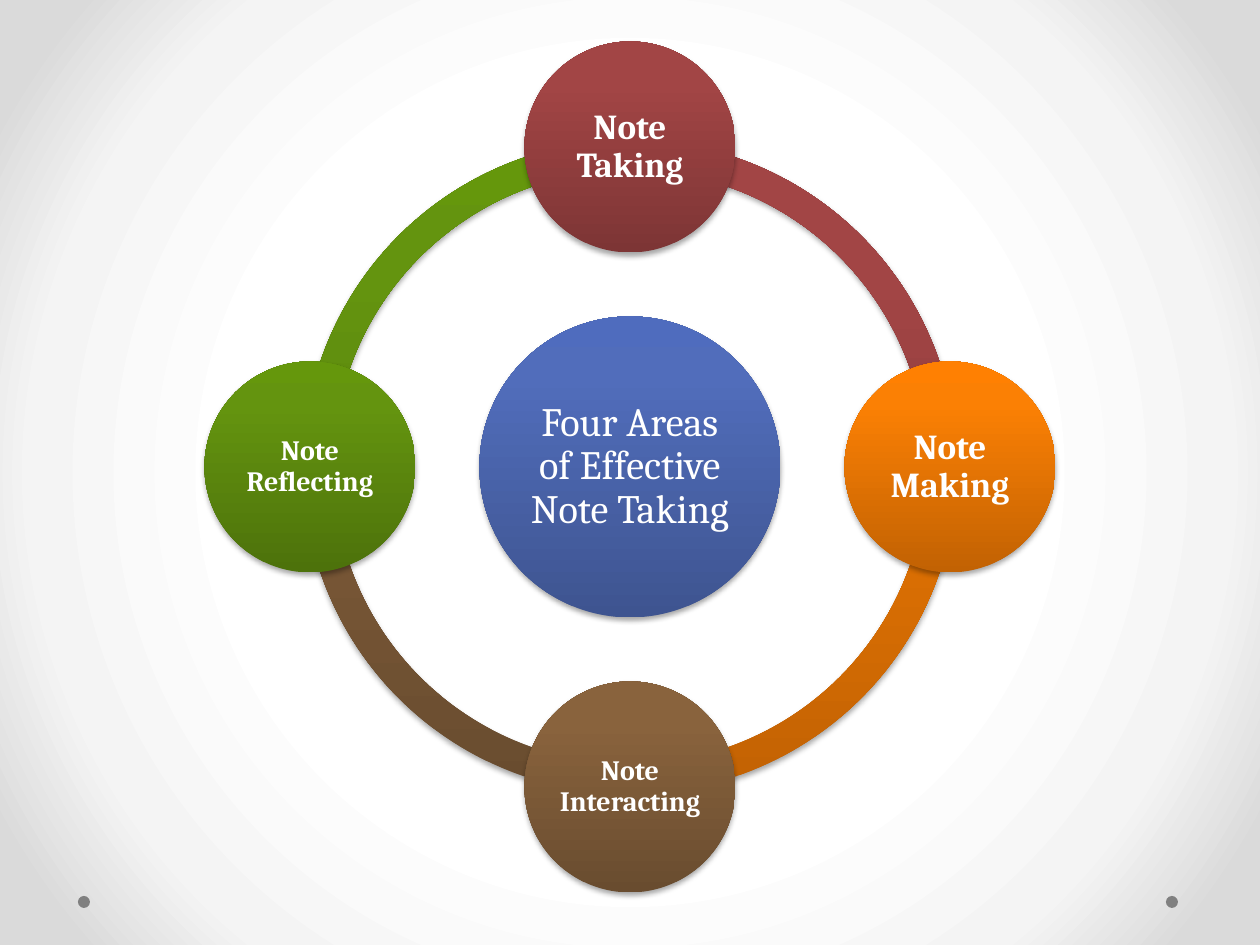
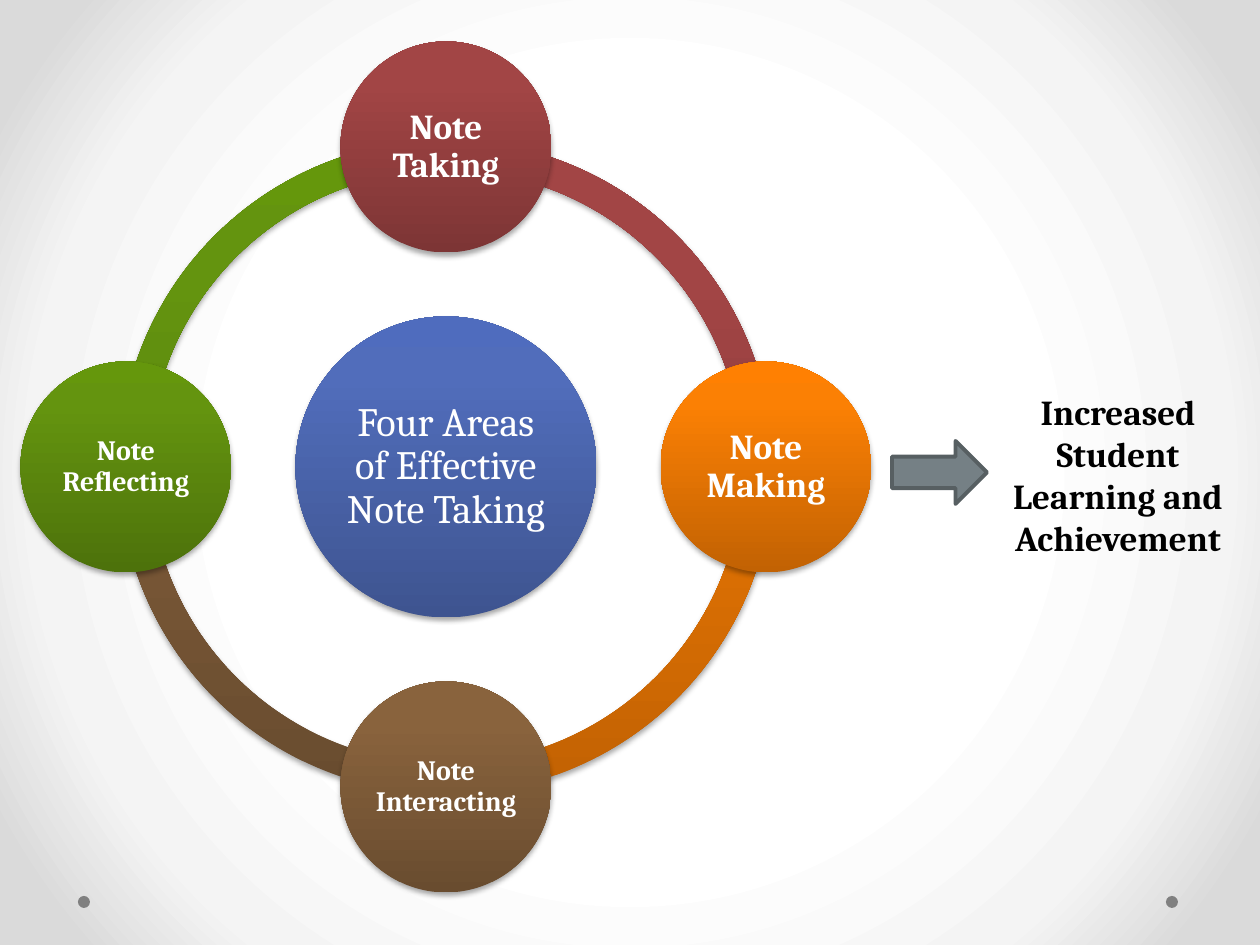
from math import cos, radians, sin

from lxml.etree import SubElement
from pptx import Presentation
from pptx.dml.color import RGBColor
from pptx.enum.shapes import MSO_SHAPE
from pptx.enum.text import MSO_ANCHOR, PP_ALIGN
from pptx.oxml.ns import qn
from pptx.util import Pt

PX = 914400 / 126
FONT = "Cambria"
WHITE, BLACK, DOT = "FFFFFF", "000000", "808080"
ARROW, ARROW_LINE = "758085", "575F62"
BACKDROP = [(50, "FFFFFF"), (76, "F4F4F4"), (92, "DADADA")]
BLUE = [(0, "3E5490"), (80, "516DBB"), (100, "4F6CBE")]
RED = [(0, "7D3535"), (80, "A24545"), (100, "A44343")]
ORANGE = [(0, "C26203"), (80, "FB8004"), (100, "FF8002")]
BROWN = [(0, "694C2F"), (80, "89633D"), (100, "8B633C")]
GREEN = [(0, "4D720B"), (80, "64940F"), (100, "65970C")]

AREAS = [
    ("Note Taking", RED, 20),
    ("Note Making", ORANGE, 20),
    ("Note Interacting", BROWN, 16),
    ("Note Reflecting", GREEN, 16),
]
HUB_TEXT = "Four Areas of Effective Note Taking"
OUTCOME = "Increased Student Learning and Achievement"
CENTER_Y, ORBIT, NODE, HUB, RING = 467, 320, 211, 301, 654


def emu(px):
    return round(px * PX)


def rgb(value):
    return RGBColor.from_string(value)


def apply(target, values):
    for name, value in values.items():
        setattr(target, name, value)


def child(parent, tag, **attrs):
    return SubElement(parent, qn(tag), {k: str(v) for k, v in attrs.items()})


def paint_gradient(fill, holder, stops, radial=False):
    fill.solid()
    solid = holder.find(qn("a:solidFill"))
    grad = child(holder, "a:gradFill", rotWithShape=1)
    holder.replace(solid, grad)
    stop_list = child(grad, "a:gsLst")
    for position, value in stops:
        stop = child(stop_list, "a:gs", pos=position * 1000)
        child(stop, "a:srgbClr", val=value)
    if radial:
        circle = child(grad, "a:path", path="circle")
        child(circle, "a:fillToRect", **dict.fromkeys("ltrb", 50000))
    else:
        child(grad, "a:lin", ang=16200000, scaled=0)


class Deck:
    def __init__(self):
        self.prs = Presentation()
        apply(self.prs, {"slide_width": emu(1260), "slide_height": emu(945)})
        master = self.prs.slide_master
        fill = master.background.fill
        fill.solid()
        holder = master.element.find(".//" + qn("p:bgPr"))
        paint_gradient(fill, holder, BACKDROP, radial=True)

    def slide(self):
        self.s = self.prs.slides.add_slide(self.prs.slide_layouts[6])
        self.shapes = self.s.shapes
        for x in (1166, 78):
            self.shape(MSO_SHAPE.OVAL, x, 896, 12, 12, DOT)

    def shape(self, kind, x, y, w, h, color, line=None):
        sp = self.shapes.add_shape(kind, emu(x), emu(y), emu(w), emu(h))
        sp.shadow.inherit = False
        if isinstance(color, str):
            sp.fill.solid()
            sp.fill.fore_color.rgb = rgb(color)
        else:
            paint_gradient(sp.fill, sp.element.spPr, color)
            self.soft_shadow(sp)
        if line:
            sp.line.color.rgb = rgb(line)
            sp.line.width = Pt(2.25)
        else:
            sp.line.fill.background()
        return sp

    def soft_shadow(self, sp):
        effects = sp.element.spPr.find(qn("a:effectLst"))
        shadow = child(effects, "a:outerShdw", blurRad=Pt(3.1), dist=Pt(1.8),
                       dir=5400000, rotWithShape=0)
        child(child(shadow, "a:srgbClr", val=BLACK), "a:alpha", val=35000)

    def label(self, sp, text, size, color, bold=True, spacing=None, **frame):
        tf = sp.text_frame
        apply(tf, {"word_wrap": True, **frame})
        p = tf.paragraphs[0]
        apply(p, {"alignment": PP_ALIGN.CENTER, "line_spacing": spacing})
        r = p.add_run()
        r.text = text
        apply(r.font, {"name": FONT, "size": Pt(size), "bold": bold})
        r.font.color.rgb = rgb(color)

    def text(self, x, y, w, h, text, size, color):
        sp = self.shapes.add_textbox(emu(x), emu(y), emu(w), emu(h))
        self.label(sp, text, size, color)

    def circle(self, cx, cy, diameter, stops, text, size, bold=True):
        sp = self.shape(MSO_SHAPE.OVAL, cx - diameter / 2, cy - diameter / 2,
                        diameter, diameter, stops)
        sides = ("left", "right", "top", "bottom")
        insets = {f"margin_{side}": emu(3) for side in sides}
        self.label(sp, text, size, WHITE, bold, 0.9,
                   vertical_anchor=MSO_ANCHOR.MIDDLE, **insets)

    def arc(self, cx, cy, start, stops):
        sp = self.shape(MSO_SHAPE.BLOCK_ARC, cx - RING / 2, cy - RING / 2,
                        RING, RING, stops)
        ends = (start % 360 * 0.6, (start + 90) % 360 * 0.6, 0.046)
        for i, value in enumerate(ends):
            sp.adjustments[i] = value

    def cycle(self, cx):
        self.shapes = self.s.shapes.add_group_shape().shapes
        angles = [270 + 90 * i for i in range(len(AREAS))]
        for angle, (_, stops, _) in reversed(list(zip(angles, AREAS))):
            self.arc(cx, CENTER_Y, angle, stops)
        self.circle(cx, CENTER_Y, HUB, BLUE, HUB_TEXT, 23, bold=False)
        for angle, (name, stops, size) in zip(angles, AREAS):
            x = cx + ORBIT * cos(radians(angle))
            y = CENTER_Y + ORBIT * sin(radians(angle))
            self.circle(x, y, NODE, stops, name, size)
        self.shapes = self.s.shapes


def main():
    deck = Deck()
    deck.slide()
    deck.cycle(630)

    deck.slide()
    deck.cycle(446)
    deck.text(987, 384, 262, 183, OUTCOME, 20, BLACK)
    deck.shape(MSO_SHAPE.RIGHT_ARROW, 892, 441, 95, 63, ARROW, ARROW_LINE)
    deck.prs.save("out.pptx")


if __name__ == "__main__":
    main()
